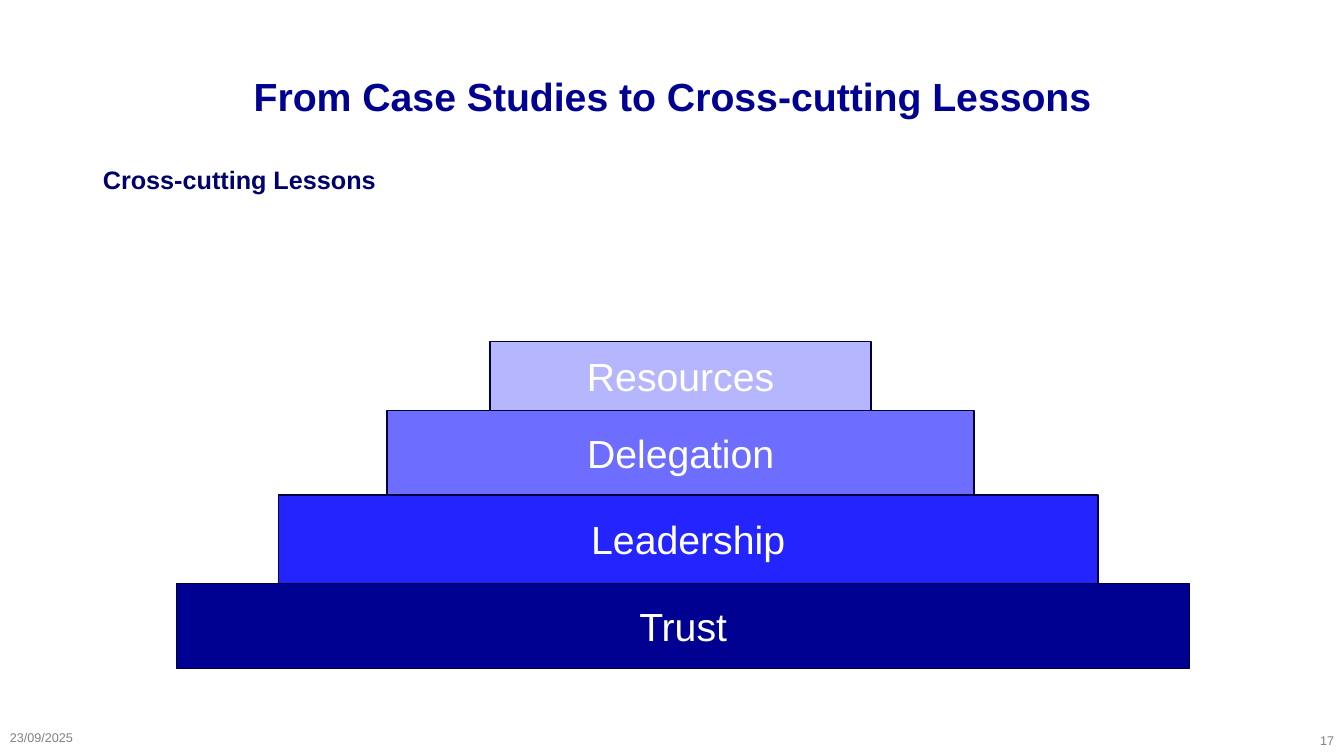
"""Build the cross-cutting lessons slide with its four-step pyramid."""
import dataclasses
import typing

import lxml.etree
import pptx
import pptx.dml.color
import pptx.enum.shapes
import pptx.enum.text
import pptx.oxml.ns
import pptx.util

ALIGN = pptx.enum.text.PP_ALIGN
ANCHOR = pptx.enum.text.MSO_ANCHOR
EMU_PER_PX = 9144


@dataclasses.dataclass(frozen=True)
class Theme:
    font: str = "Arial"
    title: str = "000091"
    subtitle: str = "00006D"
    footer: str = "808080"
    outline: str = "000040"
    step_text: str = "FFFFFF"
    title_size: int = 28
    subtitle_size: int = 18
    step_size: int = 28
    footer_size: int = 9
    outline_width: int = 1


class Area(typing.NamedTuple):
    left: int
    top: int
    width: int
    height: int


class Step(typing.NamedTuple):
    label: str
    left: int
    width: int
    height: int
    fill: str


class Footer(typing.NamedTuple):
    text: str
    area: Area
    align: ALIGN


THEME = Theme()
TITLE_AREA = Area(92, 48, 1150, 100)
SUBTITLE_AREA = Area(92, 158, 1150, 47)
PYRAMID_BASE = 663
STEPS = (
    Step("Trust", 175, 1005, 84, "000091"),
    Step("Leadership", 276, 813, 88, "2424FF"),
    Step("Delegation", 384, 582, 84, "6D6DFF"),
    Step("Resources", 486, 378, 68, "B6B6FF"),
)
FOOTERS = (
    Footer("23/09/2025", Area(0, 714, 300, 36), ALIGN.LEFT),
    Footer("17", Area(1033, 720, 300, 30), ALIGN.RIGHT),
)


def px(length: int) -> pptx.util.Emu:
    return pptx.util.Emu(length * EMU_PER_PX)


def rgb(value: str) -> pptx.dml.color.RGBColor:
    return pptx.dml.color.RGBColor.from_string(value)


def place(shape: typing.Any, area: Area) -> None:
    shape.left, shape.top, shape.width, shape.height = map(px, area)


def write(shape: typing.Any, text: str, *, size: int, color: str,
          align: ALIGN, anchor: ANCHOR = ANCHOR.MIDDLE, bold: bool = False,
          line_spacing: float = 1.0, space_after: int = 0) -> None:
    frame = shape.text_frame
    frame.word_wrap = True
    frame.auto_size = pptx.enum.text.MSO_AUTO_SIZE.NONE
    frame.vertical_anchor = anchor
    para = frame.paragraphs[0]
    para.alignment = align
    para.line_spacing = line_spacing
    para.space_before = pptx.util.Pt(0)
    para.space_after = pptx.util.Pt(space_after)
    span = para.add_run()
    span.text = text
    span.font.name = THEME.font
    span.font.size = pptx.util.Pt(size)
    span.font.bold = bold
    span.font.color.rgb = rgb(color)


def remove_bullet(para: typing.Any) -> None:
    properties = para._p.get_or_add_pPr()
    properties.set("marL", "0")
    properties.set("indent", "0")
    lxml.etree.SubElement(properties, pptx.oxml.ns.qn("a:buNone"))


def draw_headings(slide: typing.Any) -> None:
    title = slide.shapes.title
    place(title, TITLE_AREA)
    write(title, "From Case Studies to Cross-cutting Lessons",
          size=THEME.title_size, color=THEME.title, align=ALIGN.CENTER,
          bold=True, line_spacing=0.9)
    subtitle = slide.placeholders[1]
    place(subtitle, SUBTITLE_AREA)
    remove_bullet(subtitle.text_frame.paragraphs[0])
    write(subtitle, "Cross-cutting Lessons", size=THEME.subtitle_size,
          color=THEME.subtitle, align=ALIGN.JUSTIFY, anchor=ANCHOR.TOP,
          bold=True, space_after=3)


def draw_footer(slide: typing.Any, footer: Footer) -> None:
    box = slide.shapes.add_textbox(*map(px, footer.area))
    write(box, footer.text, size=THEME.footer_size, color=THEME.footer,
          align=footer.align)


def draw_step(slide: typing.Any, step: Step, top: int) -> None:
    area = Area(step.left, top, step.width, step.height)
    box = slide.shapes.add_shape(
        pptx.enum.shapes.MSO_SHAPE.RECTANGLE, *map(px, area))
    box.shadow.inherit = False
    box.fill.solid()
    box.fill.fore_color.rgb = rgb(step.fill)
    box.line.color.rgb = rgb(THEME.outline)
    box.line.width = pptx.util.Pt(THEME.outline_width)
    write(box, step.label, size=THEME.step_size, color=THEME.step_text,
          align=ALIGN.CENTER)


def main() -> None:
    deck = pptx.Presentation()
    deck.slide_width, deck.slide_height = px(1333), px(750)
    slide = deck.slides.add_slide(deck.slide_layouts[1])
    draw_headings(slide)
    for footer in FOOTERS:
        draw_footer(slide, footer)
    top = PYRAMID_BASE
    for step in STEPS:
        top -= step.height
        draw_step(slide, step, top)
    deck.save("out.pptx")


if __name__ == "__main__":
    main()
